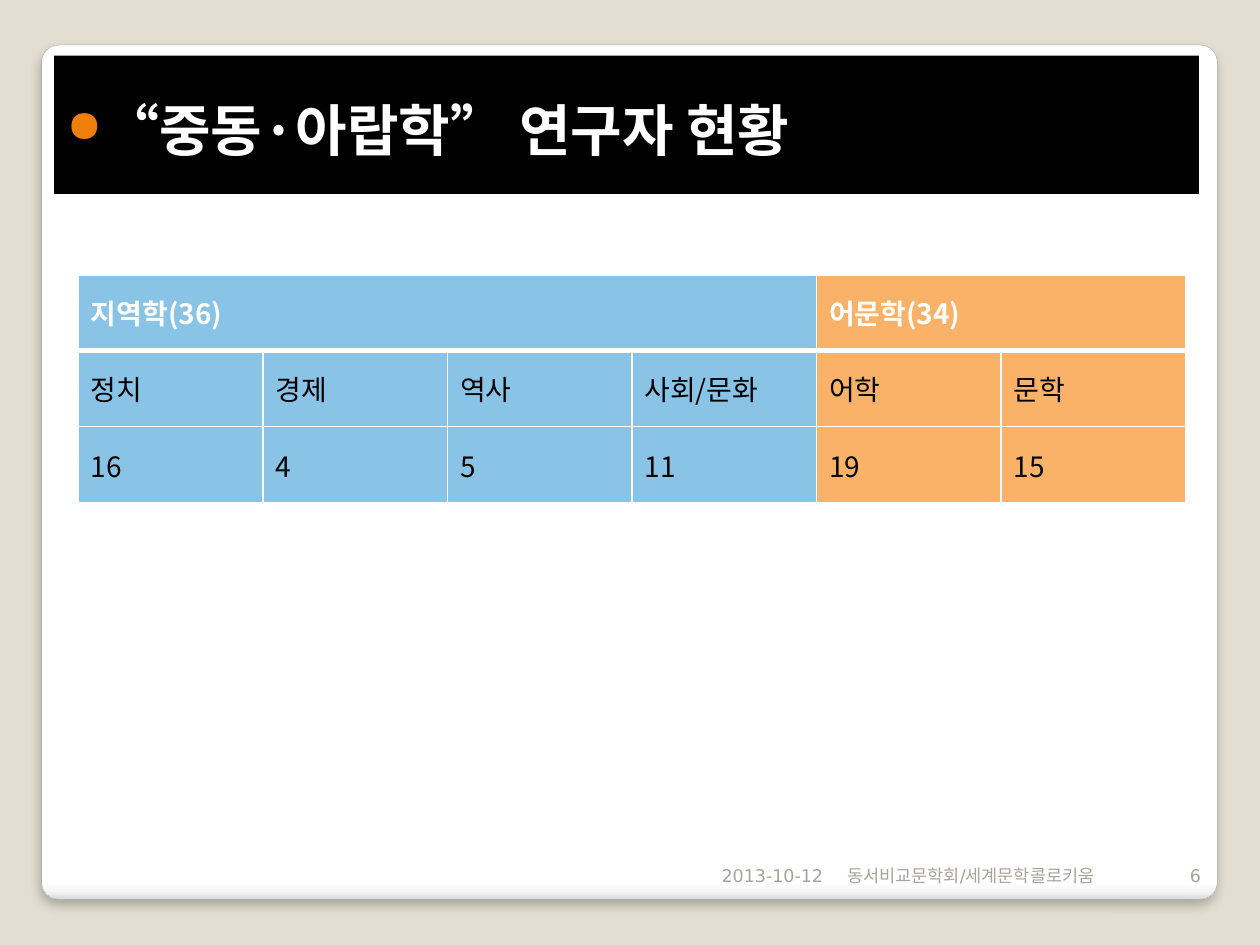
from lxml import etree
from pptx import Presentation
from pptx.dml.color import RGBColor
from pptx.enum import shapes, text
from pptx.oxml import parse_xml
from pptx.oxml.ns import nsdecls, qn
from pptx.util import Cm, Pt

# Content
TITLE = "“중동·아랍학” 연구자 현황"
GROUPS = [
    ("지역학(36)", "89C3E5", [("정치", "16"), ("경제", "4"), ("역사", "5"), ("사회/문화", "11")]),
    ("어문학(34)", "F9B268", [("어학", "19"), ("문학", "15")]),
]
FOOTERS = [  # text, left, width, alignment
    ("2013-10-12", 10.49, 6.35, text.PP_ALIGN.RIGHT),
    ("동서비교문학회/세계문학콜로키움", 16.84, 6.35, text.PP_ALIGN.LEFT),
    ("6", 23.19, 1.27, text.PP_ALIGN.RIGHT),
]
CARD_STOPS = [(0, "FFFFFF"), (98, "FFFFFF"), (99, "F7F7F7"), (100, "DADADA")]
KOREAN, LATIN = "Noto Sans CJK KR", "DejaVu Sans"


def rgb(value):
    return RGBColor.from_string(value)


def fill_solid(item, color):
    item.fill.solid()
    item.fill.fore_color.rgb = rgb(color)


def format_text(paragraph, size, color, bold=False, font=KOREAN):
    for run in paragraph.runs:
        run.font.size, run.font.bold, run.font.name = Pt(size), bold, font
        run.font.color.rgb = rgb(color)
        east_asian = etree.SubElement(run._r.get_or_add_rPr(), qn("a:ea"))
        east_asian.set("typeface", KOREAN)


def set_borders(cell, bottom=1, top=1):
    properties = cell._tc.get_or_add_tcPr()
    widths = [("lnL", 1), ("lnR", 1), ("lnT", top), ("lnB", bottom)]
    for index, (tag, width) in enumerate(widths):
        properties.insert(index, parse_xml(
            f'<a:{tag} {nsdecls("a")} w="{Pt(width)}"><a:solidFill>'
            f'<a:srgbClr val="FFFFFF"/></a:solidFill></a:{tag}>'))


def write_cell(cell, value, color, fill, bold=False):
    cell.text_frame.text = value
    cell.vertical_anchor = text.MSO_ANCHOR.MIDDLE
    format_text(cell.text_frame.paragraphs[0], 16, color, bold)
    fill_solid(cell, fill)


def add_card(slide):
    card = slide.shapes.add_shape(shapes.MSO_SHAPE.ROUNDED_RECTANGLE,
                                  Cm(0.84), Cm(0.91), Cm(23.7), Cm(17.22))
    card.adjustments[0] = 0.02
    card.line.color.rgb = rgb("A4A4A4")
    card.line.width = Pt(0.16)
    card.fill.gradient()
    card.fill.gradient_angle = 270
    stops = card._element.spPr.find(qn("a:gradFill")).find(qn("a:gsLst"))
    for stop in list(stops):
        stops.remove(stop)
    for position, color in CARD_STOPS:
        stops.append(parse_xml(f'<a:gs {nsdecls("a")} pos="{position * 1000}">'
                               f'<a:srgbClr val="{color}"/></a:gs>'))
    card._element.spPr.append(parse_xml(
        f'<a:effectLst {nsdecls("a")}><a:outerShdw blurRad="{Pt(6)}" dist="{Pt(4)}" '
        'dir="5400000" algn="t" rotWithShape="0"><a:srgbClr val="000000">'
        '<a:alpha val="25000"/></a:srgbClr></a:outerShdw></a:effectLst>'))
    slide.shapes._spTree.insert(2, card._element)  # behind the title


def add_title(slide):
    title = slide.shapes.title
    title.left, title.top, title.width, title.height = Cm(1.09), Cm(1.12), Cm(23.08), Cm(2.79)
    fill_solid(title, "000000")
    frame = title.text_frame
    frame.text = TITLE
    frame.word_wrap = True
    frame.auto_size = text.MSO_AUTO_SIZE.NONE
    frame.vertical_anchor = text.MSO_ANCHOR.TOP
    paragraph = frame.paragraphs[0]
    paragraph.alignment = text.PP_ALIGN.LEFT
    paragraph.line_spacing = 1.5
    paragraph.space_before = Pt(2.5)
    format_text(paragraph, 32, "FFFFFF", bold=True)
    properties = paragraph._p.get_or_add_pPr()
    properties.set("marL", str(Cm(0.74)))
    properties.set("indent", str(-Cm(0.74)))
    for bullet in ('<a:buClr {}><a:srgbClr val="F07F09"/></a:buClr>',
                   '<a:buSzPct {} val="80000"/>', '<a:buChar {} char="●"/>'):
        properties.append(parse_xml(bullet.format(nsdecls("a"))))


def add_researcher_table(slide):
    columns = sum(len(fields) for _, _, fields in GROUPS)
    table = slide.shapes.add_table(3, columns, Cm(1.58), Cm(5.54), Cm(22.32), Cm(4.6)).table
    table.first_row = table.horz_banding = False
    for row, height in zip(table.rows, (1.52, 1.54, 1.54)):
        row.height = Cm(height)
    start = 0
    for heading, fill, fields in GROUPS:
        for column, (field, count) in enumerate(fields, start):
            write_cell(table.cell(1, column), field, "000000", fill)
            write_cell(table.cell(2, column), count, "000000", fill)
            set_borders(table.cell(0, column), bottom=3)
            set_borders(table.cell(1, column), top=3)
            set_borders(table.cell(2, column))
        end = start + len(fields) - 1
        table.cell(0, start).merge(table.cell(0, end))
        write_cell(table.cell(0, start), heading, "FFFFFF", fill, bold=True)
        start = end + 1


def add_footers(slide):
    for value, left, width, alignment in FOOTERS:
        frame = slide.shapes.add_textbox(Cm(left), Cm(16.97), Cm(width), Cm(1.01)).text_frame
        frame.text = value
        frame.word_wrap = True
        frame.vertical_anchor = text.MSO_ANCHOR.BOTTOM
        frame.paragraphs[0].alignment = alignment
        format_text(frame.paragraphs[0], 10, "A8A49B", font=LATIN)


def main():
    presentation = Presentation()
    presentation.slide_width, presentation.slide_height = Cm(25.4), Cm(19.05)
    slide = presentation.slides.add_slide(presentation.slide_layouts[5])
    fill_solid(slide.background, "E3DED1")
    add_card(slide)
    add_title(slide)
    add_footers(slide)
    add_researcher_table(slide)
    presentation.save("out.pptx")


if __name__ == "__main__":
    main()
